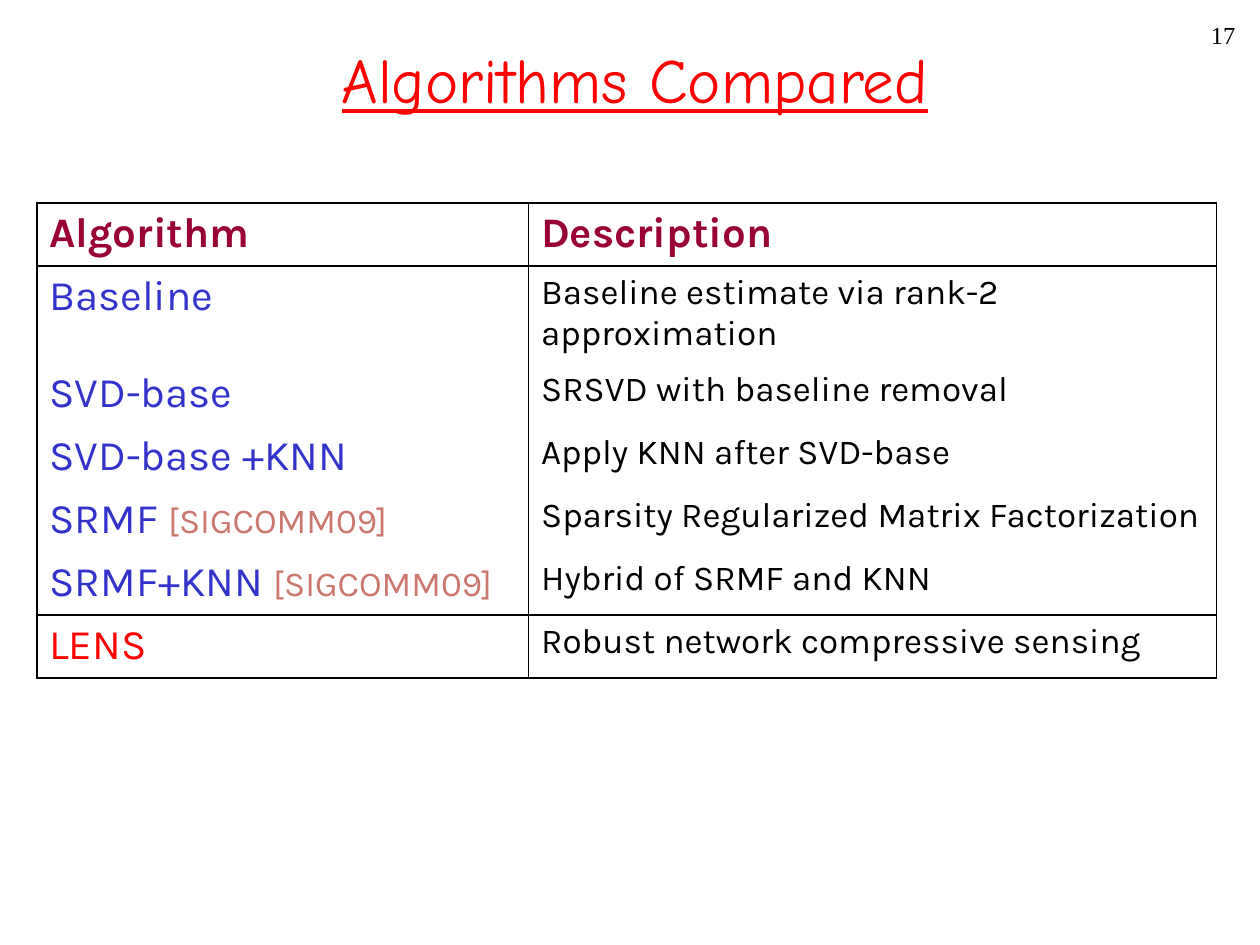
from lxml import etree
from pptx import Presentation
from pptx.dml.color import RGBColor
from pptx.enum.text import MSO_ANCHOR, MSO_AUTO_SIZE, PP_ALIGN
from pptx.oxml.ns import qn
from pptx.util import Pt

LEFT, CENTER, RIGHT = PP_ALIGN.LEFT, PP_ALIGN.CENTER, PP_ALIGN.RIGHT
MIDDLE, NO_FIT = MSO_ANCHOR.MIDDLE, MSO_AUTO_SIZE.NONE

COLORS = {"black": "000000", "red": "FF0000", "maroon": "990033",
          "blue": "3333CC", "rose": "CC776E"}
TITLE = "Algorithms Compared"
PAGE = "17"
HEADER = ("Algorithm", "Description")
ROWS = [
    ("Baseline", "", "Baseline estimate via rank-2 approximation"),
    ("SVD-base", "", "SRSVD with baseline removal"),
    ("SVD-base +KNN", "", "Apply KNN after SVD-base"),
    ("SRMF ", "[SIGCOMM09]", "Sparsity Regularized Matrix Factorization"),
    ("SRMF+KNN ", "[SIGCOMM09]", "Hybrid of SRMF and KNN"),
    ("LENS", "", "Robust network compressive sensing"),
]
COL_WIDTHS = (281, 393)
ROW_HEIGHT = 27


def add_text(tf, text, size=20, color="black", font="Karla", bold=False,
             underline=False, align=LEFT):
    p = tf.paragraphs[0]
    p.alignment = align
    r = p.add_run()
    r.text = text
    r.font.size = Pt(size)
    r.font.name = font
    r.font.bold = bold
    r.font.underline = underline
    r.font.color.rgb = RGBColor.from_string(COLORS[color])


def set_borders(cell, visible):
    tc_pr = cell._tc.get_or_add_tcPr()
    for i, side in enumerate(("L", "R", "T", "B")):
        ln = etree.Element(qn(f"a:ln{side}"), w=str(Pt(1)))
        if side in visible:
            fill = etree.SubElement(ln, qn("a:solidFill"))
            etree.SubElement(fill, qn("a:srgbClr"), val=COLORS["black"])
        else:
            etree.SubElement(ln, qn("a:noFill"))
        tc_pr.insert(i, ln)


prs = Presentation()
prs.slide_width, prs.slide_height = Pt(720), Pt(540)
s = prs.slides.add_slide(prs.slide_layouts[5])

title = s.shapes.title
title.left, title.top, title.width, title.height = Pt(20), Pt(14.5), Pt(685.5), Pt(60)
tf = title.text_frame
tf.auto_size = NO_FIT
tf.vertical_anchor = MIDDLE
add_text(tf, TITLE, size=36, color="red", font="Comic Neue", underline=True, align=CENTER)

tf = s.shapes.add_textbox(Pt(563), Pt(8), Pt(150), Pt(24)).text_frame
tf.word_wrap = True
add_text(tf, PAGE, size=14, font="Times New Roman", align=RIGHT)

n_rows = len(ROWS) + 1
table = s.shapes.add_table(n_rows, len(COL_WIDTHS), Pt(21), Pt(116),
                           Pt(sum(COL_WIDTHS)), Pt(n_rows * ROW_HEIGHT)).table
table.first_row = table.horz_banding = False
for col, width in zip(table.columns, COL_WIDTHS):
    col.width = Pt(width)

for i, row in enumerate(table.rows):
    row.height = Pt(ROW_HEIGHT)
    sides = "LR"
    if i in (0, 1, n_rows - 1):
        sides += "T"
    if i in (0, n_rows - 2, n_rows - 1):
        sides += "B"
    for cell in row.cells:
        cell.fill.background()
        set_borders(cell, sides)

for cell, text in zip(table.rows[0].cells, HEADER):
    add_text(cell.text_frame, text, size=24, color="maroon", bold=True)

for i, (name, source, description) in enumerate(ROWS, 1):
    tf = table.cell(i, 0).text_frame
    add_text(tf, name, size=24, color="red" if i == len(ROWS) else "blue")
    if source:
        add_text(tf, source, color="rose")
    add_text(table.cell(i, 1).text_frame, description)

prs.save("out.pptx")
